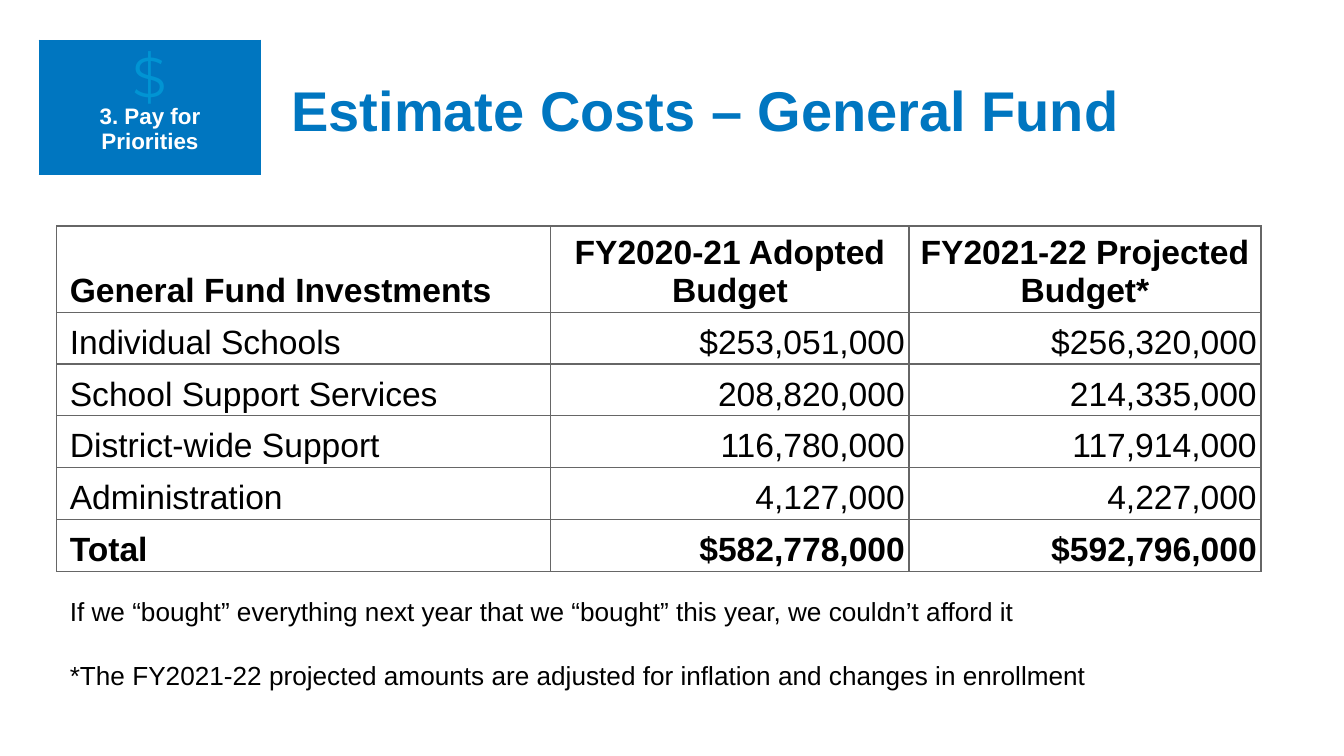
from lxml import etree
from pptx import Presentation
from pptx.dml.color import RGBColor
from pptx.enum.text import MSO_ANCHOR, PP_ALIGN
from pptx.oxml.ns import qn
from pptx.util import Cm, Pt

LEFT, CENTER, RIGHT = PP_ALIGN.LEFT, PP_ALIGN.CENTER, PP_ALIGN.RIGHT
TOP, BOTTOM = MSO_ANCHOR.TOP, MSO_ANCHOR.BOTTOM
COLORS = {"blue": "0076C0", "light_blue": "0194D3", "white": "FFFFFF",
          "black": "000000", "grid": "666666"}


def write(frame, text, size=18, color="black", bold=False, font="Arial",
          align=LEFT, line=1.0, gap=0, margins=(0.25, 0.25, 0.25, 0.25)):
    """Fill a text frame or cell, one paragraph per line; margins are left, top, right, bottom in cm."""
    frame.margin_left, frame.margin_top, frame.margin_right, frame.margin_bottom = map(Cm, margins)
    frame.word_wrap = True
    body = getattr(frame, "text_frame", frame)
    body.text = text
    for index, para in enumerate(body.paragraphs):
        para.alignment = align
        para.line_spacing = line
        if index:
            para.space_before = Pt(gap)
        for span in para.runs:
            span.font.name = font
            span.font.size = Pt(size)
            span.font.bold = bold
            span.font.color.rgb = RGBColor.from_string(COLORS[color])


def style_cell(cell, border, fill=None, anchor=TOP):
    cell.vertical_anchor = anchor
    properties = cell._tc.get_or_add_tcPr()
    for side in ("a:lnL", "a:lnR", "a:lnT", "a:lnB"):
        edge = etree.SubElement(properties, qn(side), w=str(Pt(0.75)))
        solid = etree.SubElement(edge, qn("a:solidFill"))
        etree.SubElement(solid, qn("a:srgbClr"), val=COLORS[border])
    if fill:
        cell.fill.solid()
        cell.fill.fore_color.rgb = RGBColor.from_string(COLORS[fill])
    else:
        cell.fill.background()


deck = Presentation()
deck.slide_width, deck.slide_height = Cm(25.4), Cm(14.29)
page = deck.slides.add_slide(deck.slide_layouts[6])

# Step badge
badge = page.shapes.add_table(1, 1, Cm(0.74), Cm(0.76), Cm(4.19), Cm(2.54)).table
badge_cell = badge.cell(0, 0)
style_cell(badge_cell, "blue", fill="blue")
write(badge_cell, "3. Pay for\nPriorities", size=12, color="white", bold=True,
      align=CENTER, margins=(0.25, 1.2, 0.25, 0.25))

symbol_box = page.shapes.add_textbox(Cm(0.76), Cm(0.53), Cm(4.14), Cm(1.52))
write(symbol_box.text_frame, "$", size=30, color="light_blue", font="Montserrat", align=CENTER)

title_box = page.shapes.add_textbox(Cm(5.26), Cm(1.17), Cm(19.86), Cm(1.68))
write(title_box.text_frame, "Estimate Costs – General Fund", size=30, color="blue", bold=True)

# Budget table
budget_rows = [
    ("General Fund Investments", "FY2020-21 Adopted Budget", "FY2021-22 Projected Budget*"),
    ("Individual Schools", "$253,051,000", "$256,320,000"),
    ("School Support Services", "208,820,000", "214,335,000"),
    ("District-wide Support", "116,780,000", "117,914,000"),
    ("Administration", "4,127,000", "4,227,000"),
    ("Total", "$582,778,000", "$592,796,000"),
]
column_widths = [9.34, 6.77, 6.65]
last_row = len(budget_rows) - 1
budget = page.shapes.add_table(len(budget_rows), len(column_widths), Cm(1.07), Cm(4.27),
                               Cm(sum(column_widths)), Cm(6.55)).table
for column, width in zip(budget.columns, column_widths):
    column.width = Cm(width)
for r, values in enumerate(budget_rows):
    budget.rows[r].height = Cm(0.98 if r else 1.63)
    for c, value in enumerate(values):
        cell = budget.cell(r, c)
        side = 0.08 if c else 0.25
        style_cell(cell, "grid", anchor=BOTTOM)
        write(cell, value, bold=r in (0, last_row), line=1.15 if r else 1.0,
              align=LEFT if c == 0 else RIGHT if r else CENTER,
              margins=(side, 0.05, side, 0.05))

# Notes under the table
footnote_box = page.shapes.add_textbox(Cm(1.07), Cm(11.13), Cm(22.76), Cm(2.41))
write(footnote_box.text_frame,
      "If we “bought” everything next year that we “bought” this year, we couldn’t afford it\n"
      "*The FY2021-22 projected amounts are adjusted for inflation and changes in enrollment",
      size=14, gap=17.5, margins=(0.25, 0.13, 0.25, 0.13))

deck.save("out.pptx")
